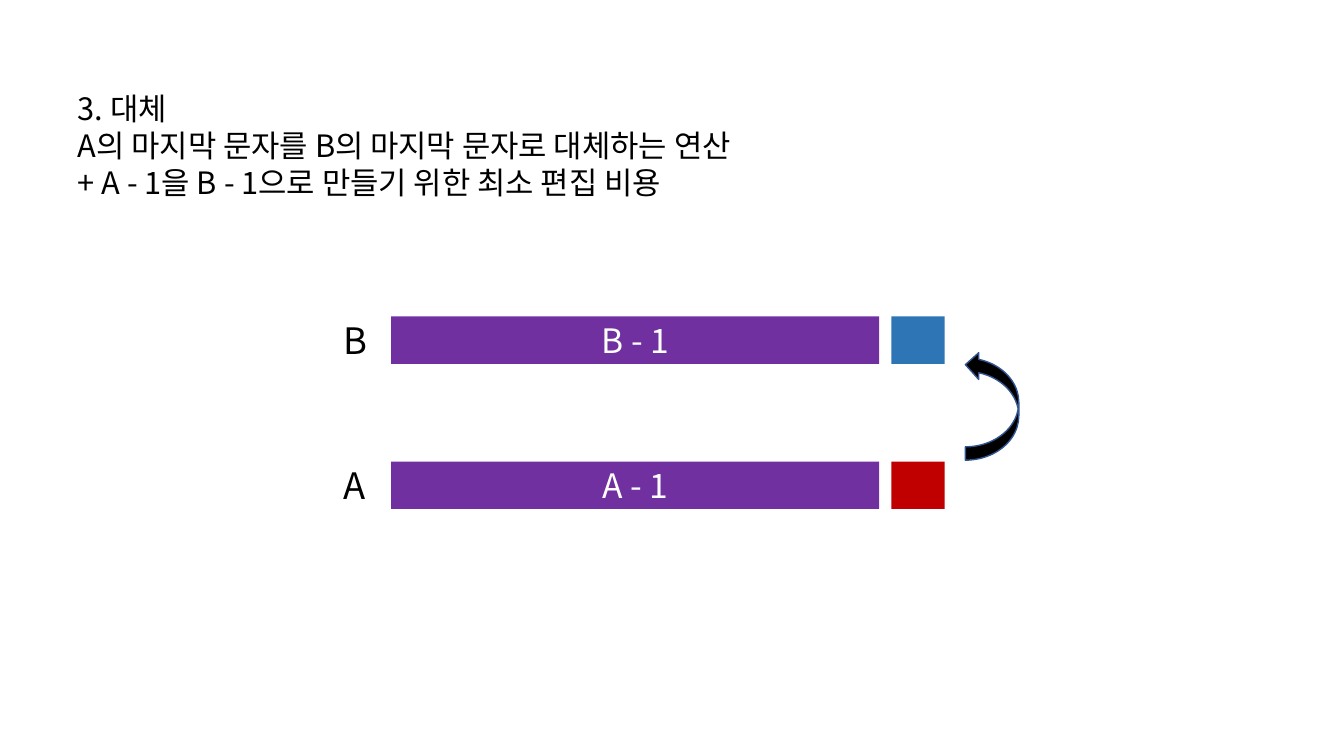
from pptx import Presentation
from pptx.dml.color import RGBColor
from pptx.enum.shapes import MSO_SHAPE
from pptx.enum.text import MSO_ANCHOR, MSO_AUTO_SIZE, PP_ALIGN
from pptx.oxml.ns import qn
from pptx.util import Inches, Pt
from lxml.etree import SubElement

FONT = "Noto Sans CJK KR"
HEADING = [
    "3. 대체",
    "A의 마지막 문자를 B의 마지막 문자로 대체하는 연산",
    "+ A - 1을 B - 1으로 만들기 위한 최소 편집 비용",
]
# Label, text on the bar, colour of the last character
STRINGS = [("B", "B - 1", "2E75B6"), ("A", "A - 1", "C00000")]

ROW_TOP, ROW_STEP, ROW_H = 3.14, 1.44, 0.47
LABEL_X, LABEL_W = 3.31, 0.45
BAR_X, BAR_W = 3.88, 4.84
LAST_X, LAST_W = 8.84, 0.53


def rgb(value):
    return RGBColor.from_string(value)


def write(shape, lines, size, color="000000", align=PP_ALIGN.LEFT,
          anchor=MSO_ANCHOR.MIDDLE, wrap=False):
    tf = shape.text_frame
    tf.word_wrap, tf.vertical_anchor = wrap, anchor
    tf.auto_size = MSO_AUTO_SIZE.NONE
    for i, line in enumerate(lines):
        p = tf.add_paragraph() if i else tf.paragraphs[0]
        p.alignment = align
        p.line_spacing = Pt(size * 1.2)
        p.space_before = Pt(0)
        r = p.add_run()
        r.text = line
        r.font.name, r.font.size = FONT, Pt(size)
        r.font.color.rgb = rgb(color)
        SubElement(r.font._element, qn("a:ea"), typeface=FONT)


def add_block(s, kind, box, fill, line=None):
    sp = s.shapes.add_shape(kind, *map(Inches, box))
    sp.shadow.inherit = False
    sp.fill.solid()
    sp.fill.fore_color.rgb = rgb(fill)
    if line:
        sp.line.color.rgb = rgb(line)
        sp.line.width = Pt(1)
    else:
        sp.line.fill.background()
    return sp


prs = Presentation()
prs.slide_width, prs.slide_height = Inches(13.33), Inches(7.5)
s = prs.slides.add_slide(prs.slide_layouts[5])

# Heading
title = s.shapes.title
title.left, title.top, title.width, title.height = map(Inches, (0.67, 0.84, 7.52, 1.21))
write(title, HEADING, 22, anchor=MSO_ANCHOR.TOP, wrap=True)

# One row per string: label, bar, last character
for i, (name, rest, color) in enumerate(STRINGS):
    y = ROW_TOP + i * ROW_STEP
    label = s.shapes.add_textbox(*map(Inches, (LABEL_X, y, LABEL_W, ROW_H)))
    write(label, [name], 26)
    bar = add_block(s, MSO_SHAPE.RECTANGLE, (BAR_X, y, BAR_W, ROW_H), "7030A0")
    write(bar, [rest], 24, color="FFFFFF", align=PP_ALIGN.CENTER)
    add_block(s, MSO_SHAPE.RECTANGLE, (LAST_X, y, LAST_W, ROW_H), color)

# Replacement arrow from A up to B
arrow = add_block(s, MSO_SHAPE.CURVED_UP_ARROW, (9.3, 3.76, 1.08, 0.53), "000000", line="325491")
arrow.rotation = 270

prs.save("out.pptx")
